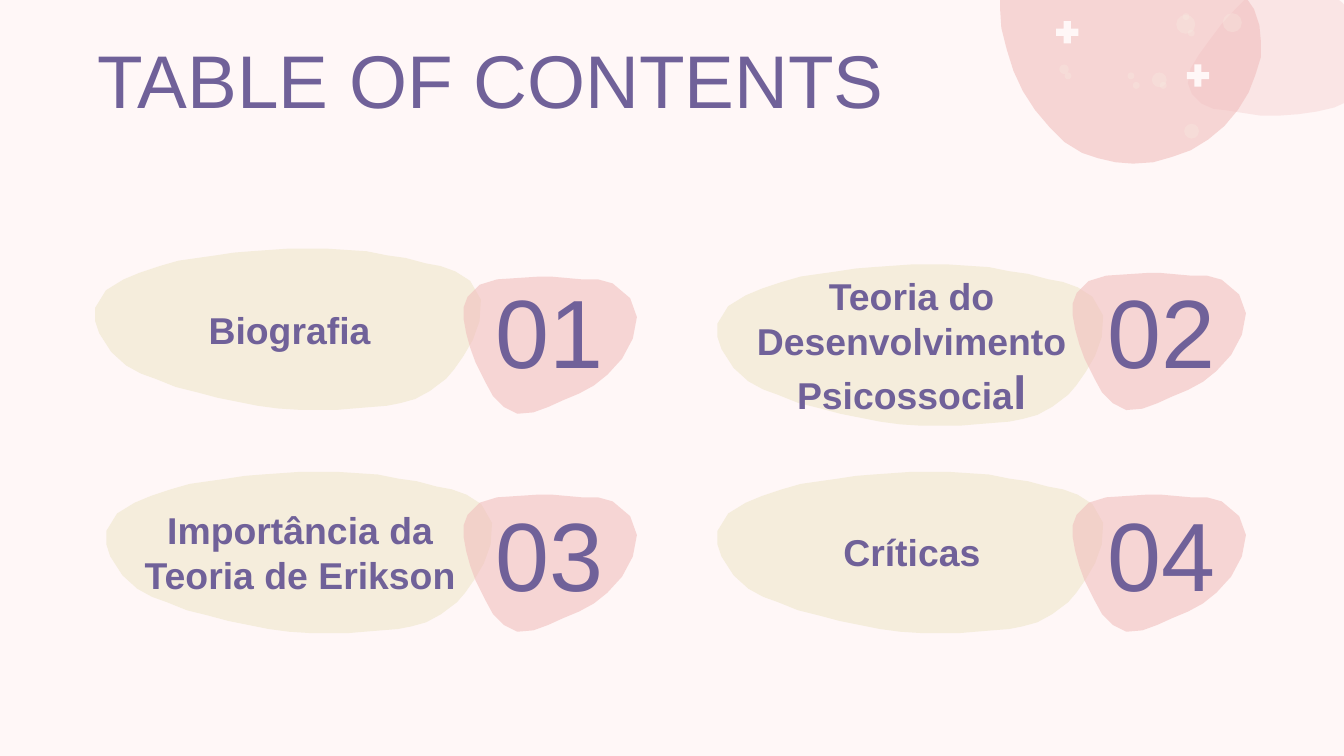
from dataclasses import dataclass
from math import ceil, dist

from lxml import etree
from pptx import Presentation
from pptx.dml.color import RGBColor
from pptx.enum.shapes import MSO_SHAPE
from pptx.enum.text import MSO_ANCHOR, MSO_AUTO_SIZE, PP_ALIGN
from pptx.oxml.ns import qn
from pptx.util import Cm, Pt

OVAL, CROSS = MSO_SHAPE.OVAL, MSO_SHAPE.CROSS
LEFT, CENTER = PP_ALIGN.LEFT, PP_ALIGN.CENTER
MIDDLE, FIXED = MSO_ANCHOR.MIDDLE, MSO_AUTO_SIZE.NONE

BLUSH = RGBColor(0xFF, 0xF7, 0xF7)
PALE = RGBColor(0xF5, 0xCF, 0xCF)
ROSE = RGBColor(0xF1, 0xBD, 0xBC)
CREAM = RGBColor(0xF5, 0xED, 0xDC)
IVORY = RGBColor(0xF8, 0xF2, 0xE5)
PURPLE = RGBColor(0x70, 0x61, 0x99)

UNIT = Cm(0.0254)  # outline grid step
CHORD = 16  # longest straight piece of a curve, in grid steps

HEAD = {"name": "Arial", "size": Pt(40), "bold": False}
NUMBER = {"name": "Arial", "size": Pt(52), "bold": False}
LABEL = {"name": "Arial", "size": Pt(20), "bold": True}
LARGE = {**LABEL, "size": Pt(25)}

# Outlines: a start point, then two handles and an end point per curve
LEAF = [(157, 0), (130, 0), (103, 3), (76, 7), (62, 9), (48, 12), (33, 18),
        (24, 21), (3, 28), (0, 44), (0, 51), (0, 57), (3, 63),
        (14, 86), (31, 92), (45, 97), (86, 113), (126, 120), (167, 120),
        (184, 120), (200, 119), (217, 117), (230, 115), (245, 112), (261, 97),
        (267, 91), (281, 73), (286, 54),
        (289, 43), (288, 32), (279, 24), (268, 14), (258, 14), (246, 11),
        (217, 3), (187, 0), (157, 0)]
PEBBLE = [(55, 0), (45, 0), (35, 1), (25, 2), (16, 3), (7, 6), (3, 15),
          (0, 20), (0, 25), (0, 31), (1, 42), (5, 54), (9, 64),
          (12, 69), (14, 74), (16, 78), (21, 89), (29, 100), (40, 102),
          (48, 103), (56, 100), (63, 97),
          (78, 91), (94, 84), (107, 73), (127, 56), (142, 19), (111, 5),
          (104, 2), (96, 2), (88, 2), (77, 1), (66, 0), (55, 0)]
CLOUD = [(73, 0), (72, 0), (71, 0), (70, 0), (48, 2), (21, 39), (8, 58),
         (4, 64), (0, 72), (0, 79), (1, 84), (4, 90), (10, 94),
         (16, 97), (22, 99), (28, 99),
         (41, 102), (54, 103), (68, 103), (87, 103), (105, 100), (122, 91),
         (130, 87), (138, 81), (140, 72), (142, 64), (140, 57), (134, 44),
         (122, 21), (98, 0), (73, 0)]
BLOB = [(74, 0), (63, 0), (52, 0), (41, 2),
        (25, 5), (14, 8), (7, 16), (4, 19), (2, 25), (0, 31),
        (0, 35), (0, 39), (0, 44), (0, 83), (26, 134), (61, 152),
        (73, 157), (86, 160), (99, 160), (134, 160), (168, 140), (185, 107),
        (194, 90), (196, 71), (193, 57),
        (192, 53), (191, 49), (189, 45), (179, 26), (158, 15), (138, 9),
        (117, 3), (95, 0), (74, 0)]


@dataclass
class Box:
    x: float
    y: float
    w: float
    h: float


@dataclass
class Topic:
    runs: list[tuple[str, dict]]
    leaf: tuple[float, float]
    stone: tuple[float, float]
    label: Box
    digit: Box


# Lengths in centimetres
TITLE = Box(1.6, 0.69, 21.41, 1.6)
TOPICS = [
    Topic([("Biografia", LABEL)], (1.8, 4.7), (8.76, 5.23),
          Box(2.01, 5.49, 6.93, 1.47), Box(8.94, 5.31, 2.9, 1.83)),
    Topic([("Teoria do Desenvolvimento Psicossocia", LABEL), ("l", LARGE)],
          (13.56, 5), (20.27, 5.16),
          Box(13.13, 4.9, 8.2, 3.28), Box(20.5, 5.31, 2.9, 1.83)),
    Topic([("Importância da Teoria de Erikson", LABEL)], (2.01, 8.92), (8.76, 9.35),
          Box(2.21, 9.7, 6.93, 1.47), Box(8.94, 9.53, 2.9, 1.83)),
    Topic([("Críticas", LABEL)], (13.56, 8.92), (20.27, 9.35),
          Box(13.77, 9.7, 6.93, 1.47), Box(20.5, 9.53, 2.9, 1.83)),
]
DOTS = [(23.11, 0.25, 0.36), (21.41, 1.55, 0.13), (20.02, 1.22, 0.18),
        (20.12, 1.37, 0.13), (21.77, 1.37, 0.28), (21.92, 1.55, 0.13),
        (22.23, 0.28, 0.36), (22.45, 0.56, 0.13), (22.35, 0.25, 0.13),
        (21.31, 1.37, 0.13), (22.38, 2.34, 0.28)]
PLUSES = [(22.43, 1.22), (19.96, 0.4)]


def paint(shape, color: RGBColor, alpha: int = 100) -> None:
    shape.shadow.inherit = False
    shape.line.fill.background()
    shape.fill.solid()
    shape.fill.fore_color.rgb = color
    if alpha < 100:
        tone = shape.fill._xPr.find(".//" + qn("a:srgbClr"))
        etree.SubElement(tone, qn("a:alpha")).set("val", str(alpha * 1000))


def trace(path: list) -> list:
    """Turn the cubic curves into a short list of points."""
    points = [path[0]]
    for i in range(0, len(path) - 1, 3):
        knots = path[i:i + 4]
        steps = ceil(dist(knots[0], knots[3]) / CHORD)
        for step in range(1, steps + 1):
            t = step / steps
            s = 1 - t
            mix = (s ** 3, 3 * s * s * t, 3 * s * t * t, t ** 3)
            points.append(tuple(round(sum(m * k[axis] for m, k in zip(mix, knots)), 2)
                                for axis in (0, 1)))
    return points


def curve(slide, path: list, x: float, y: float, color: RGBColor, alpha: int = 100) -> None:
    first, *rest = trace(path)
    pen = slide.shapes.build_freeform(*first, scale=UNIT)
    pen.add_line_segments(rest[:-1], close=True)
    paint(pen.convert_to_shape(Cm(x), Cm(y)), color, alpha)


def mark(slide, kind, x: float, y: float, size: float, color: RGBColor, alpha: int = 100):
    shape = slide.shapes.add_shape(kind, Cm(x), Cm(y), Cm(size), Cm(size))
    paint(shape, color, alpha)
    return shape


def write(shape, box: Box, runs: list, align=CENTER) -> None:
    place = {"left": box.x, "top": box.y, "width": box.w, "height": box.h}
    for key, value in place.items():
        setattr(shape, key, Cm(value))
    frame = shape.text_frame
    sides = ("left", "top", "right", "bottom")
    form = {"word_wrap": True, "auto_size": FIXED, "vertical_anchor": MIDDLE,
            **{f"margin_{side}": Cm(0.25) for side in sides}}
    for key, value in form.items():
        setattr(frame, key, value)
    line = frame.paragraphs[0]
    line.alignment = align
    for text, style in runs:
        run = line.add_run()
        run.text = text
        run.font.color.rgb = PURPLE
        for key, value in style.items():
            setattr(run.font, key, value)


def label(slide, box: Box, runs: list) -> None:
    write(slide.shapes.add_textbox(0, 0, 0, 0), box, runs)


def main() -> None:
    deck = Presentation()
    deck.slide_width, deck.slide_height = Cm(25.4), Cm(14.29)
    slide = deck.slides.add_slide(deck.slide_layouts[5])
    slide.background.fill.solid()
    slide.background.fill.fore_color.rgb = BLUSH

    # Corner shapes
    curve(slide, CLOUD, 22.45, -0.43, PALE, 44)
    curve(slide, BLOB, 18.9, -0.97, ROSE, 58)
    for x, y, size in DOTS:
        mark(slide, OVAL, x, y, size, IVORY, 26)
    for x, y in PLUSES:
        mark(slide, CROSS, x, y, 0.42, BLUSH).adjustments[0] = 0.34

    # Title
    write(slide.shapes.title, TITLE, [("TABLE OF CONTENTS", HEAD)], LEFT)

    # Numbered topics
    for count, topic in enumerate(TOPICS, 1):
        curve(slide, LEAF, *topic.leaf, CREAM)
        curve(slide, PEBBLE, *topic.stone, ROSE, 58)
        label(slide, topic.label, topic.runs)
        label(slide, topic.digit, [(f"{count:02}", NUMBER)])

    deck.save("out.pptx")


if __name__ == "__main__":
    main()
